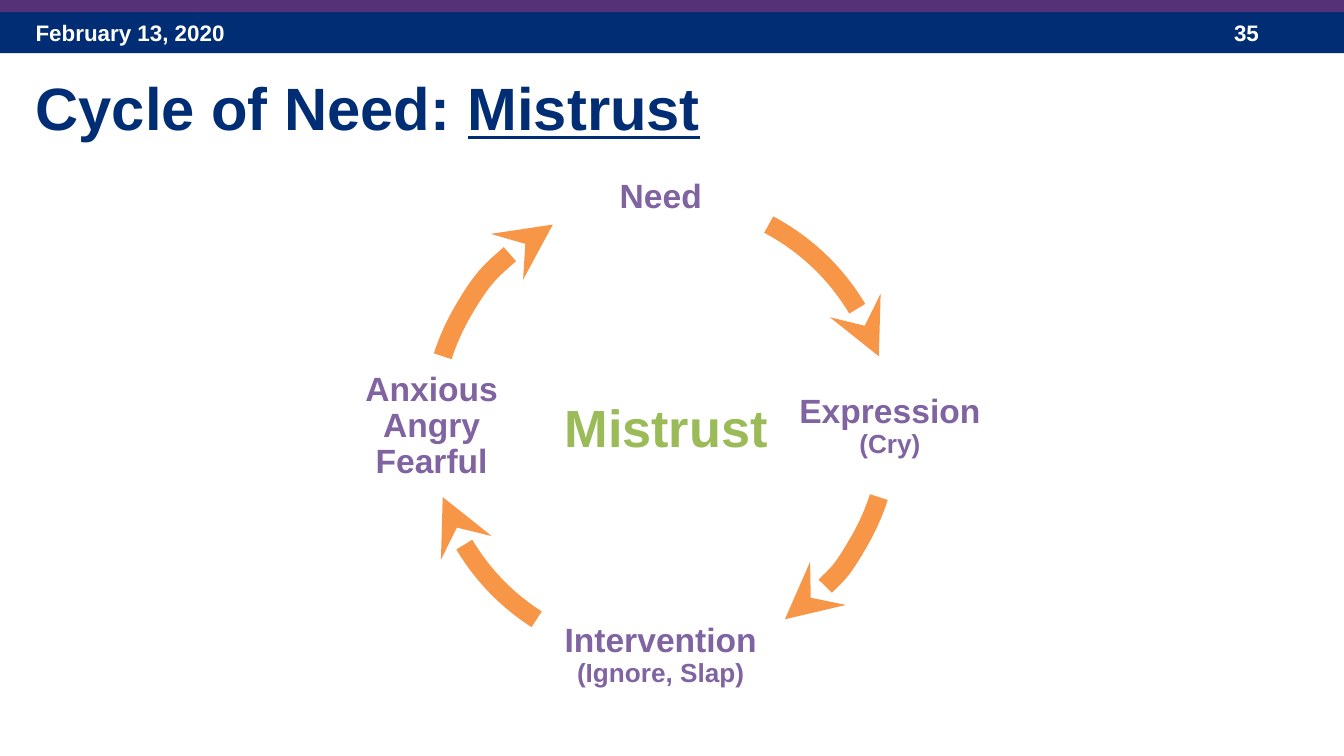
"""Build the slide showing the mistrust cycle of need."""
from math import cos, radians, sin

from lxml.etree import SubElement
from pptx import Presentation
from pptx.dml.color import RGBColor
from pptx.enum.shapes import MSO_SHAPE
from pptx.enum.text import MSO_ANCHOR, PP_ALIGN
from pptx.oxml.ns import qn
from pptx.util import Pt

NAVY = RGBColor(0x00, 0x2D, 0x73)
PLUM = RGBColor(0x55, 0x32, 0x78)
WHITE = RGBColor(0xFF, 0xFF, 0xFF)
VIOLET = RGBColor(0x80, 0x64, 0xA2)
ORANGE = RGBColor(0xF7, 0x96, 0x46)
GREEN = RGBColor(0x9B, 0xBB, 0x59)

WIDTH, HEIGHT = 720, 405
CENTER_X, CENTER_Y, RADIUS = 354, 228.6, 122.76
STAGE_HEIGHT, STAGE_INSET = 67, 5

DATE = [[("February 13, 2020", 12, False)]]
PAGE = [[("35", 12, False)]]
TITLE = [[("Cycle of Need: ", 32, False), ("Mistrust", 32, True)]]
OUTCOME = [[("Mistrust", 28, False)]]
STAGES = [
    (270, 107, [("Need", 18)]),
    (0, 131, [("Expression", 18), ("(Cry)", 14)]),
    (90, 125, [("Intervention", 18), ("(Ignore, Slap)", 14)]),
    (180, 107, [("Anxious", 18), ("Angry", 18), ("Fearful", 18)]),
]
ARROWS = [(298.1, 342.1), (17.9, 57.2), (122.8, 162.1), (197.9, 241.9)]


def add_bar(slide, top, height, color):
    bar = slide.shapes.add_shape(
        MSO_SHAPE.RECTANGLE, Pt(0), Pt(top), Pt(WIDTH), Pt(height))
    bar.shadow.inherit = False
    bar.fill.solid()
    bar.fill.fore_color.rgb = color
    bar.line.fill.background()


def add_text(slide, left, top, width, height, lines, color, align=PP_ALIGN.LEFT):
    box = slide.shapes.add_textbox(Pt(left), Pt(top), Pt(width), Pt(height))
    frame = box.text_frame
    frame.word_wrap = True
    paragraph = frame.paragraphs[0]
    paragraph.alignment = align
    for number, line in enumerate(lines):
        if number:
            paragraph.add_line_break()
        for text, size, underlined in line:
            run = paragraph.add_run()
            run.text = text
            run.font.name = "Arial"
            run.font.size = Pt(size)
            run.font.bold = True
            run.font.color.rgb = color
            if underlined:
                run.font.underline = True
    return frame


def add_stage(slide, angle, width, lines):
    left = CENTER_X + RADIUS * cos(radians(angle)) - width / 2
    top = CENTER_Y + RADIUS * sin(radians(angle)) - STAGE_HEIGHT / 2
    stage_lines = [[(text, size, False)] for text, size in lines]
    frame = add_text(slide, left, top, width, STAGE_HEIGHT, stage_lines,
                     VIOLET, PP_ALIGN.CENTER)
    frame.vertical_anchor = MSO_ANCHOR.MIDDLE
    frame.margin_left = frame.margin_right = Pt(STAGE_INSET)
    frame.margin_top = frame.margin_bottom = Pt(STAGE_INSET)
    frame.paragraphs[0].line_spacing = 0.9


def add_arrow(slide, start, end):
    arrow = slide.shapes.add_shape(
        MSO_SHAPE.ARC, Pt(CENTER_X - RADIUS), Pt(CENTER_Y - RADIUS),
        Pt(2 * RADIUS), Pt(2 * RADIUS))
    for index, angle in enumerate((start, end)):
        arrow.adjustments[index] = angle * 0.6
    arrow.shadow.inherit = False
    arrow.fill.background()
    arrow.line.color.rgb = ORANGE
    arrow.line.width = Pt(10)
    outline = arrow.line._get_or_add_ln()
    SubElement(outline, qn("a:tailEnd"), type="stealth")


def main():
    presentation = Presentation()
    presentation.slide_width = Pt(WIDTH)
    presentation.slide_height = Pt(HEIGHT)
    slide = presentation.slides.add_slide(presentation.slide_layouts[6])

    add_bar(slide, 5, 23.5, NAVY)
    add_text(slide, 12, 6.8, 168, 21.6, DATE, WHITE)
    add_text(slide, 654, 6.8, 54, 21.6, PAGE, WHITE)
    add_bar(slide, 0, 6.5, PLUM)
    add_text(slide, 12, 34.5, 684, 50.4, TITLE, NAVY)
    for stage, arrow in zip(STAGES, ARROWS):
        add_stage(slide, *stage)
        add_arrow(slide, *arrow)
    add_text(slide, 293.8, 208, 126, 41, OUTCOME, GREEN, PP_ALIGN.CENTER)

    presentation.save("out.pptx")


if __name__ == "__main__":
    main()
